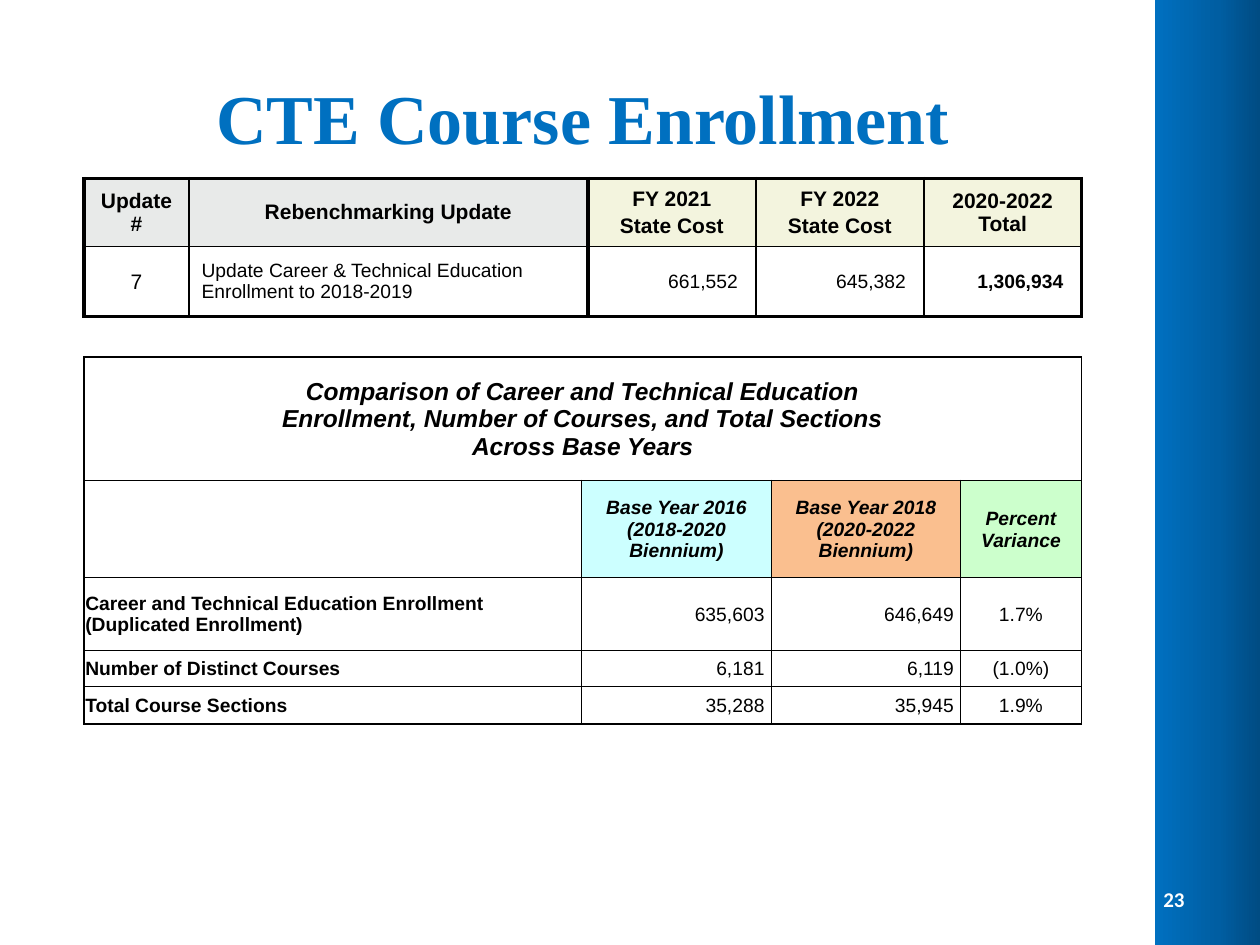
from copy import deepcopy
from dataclasses import dataclass

from lxml.etree import SubElement
from pptx import Presentation
from pptx.dml.color import RGBColor as Rgb
from pptx.enum.shapes import MSO_SHAPE as Preset
from pptx.enum.text import MSO_ANCHOR as Anchor, PP_ALIGN as Align
from pptx.oxml.ns import qn
from pptx.util import Pt


@dataclass(frozen=True)
class Theme:
    """Colours, fonts and type sizes of the slide."""
    title: str = "0070C0"
    bar: tuple = ("0070C0", "005EA2", "004272")
    ink: str = "000000"
    paper: str = "FFFFFF"
    update_head: str = "E8EAE9"
    cost_head: str = "F3F4DE"
    base_2016: str = "CCFFFF"
    base_2018: str = "FABF8F"
    variance: str = "CCFFCC"
    title_font: str = "Times New Roman"
    table_font: str = "Arial"
    number_font: str = "Calibri"
    title_size: float = 40
    caption_size: float = 14
    head_size: float = 12
    body_size: float = 11


THEME = Theme()
NO_STYLE = "{2D5ABB26-0587-4C30-8999-92F81FD0307C}"
TIGHT = (0.75, 0.75, 0.75, 0)
ROOMY = (7.2, 3.6, 7.2, 3.6)
SIDES = (7.2, 0, 7.2, 0)


@dataclass(frozen=True)
class Style:
    """Look of a piece of text."""
    size: float = THEME.body_size
    bold: bool = False
    italic: bool = False
    align: Align = Align.LEFT
    font: str = THEME.table_font
    color: str = THEME.ink


@dataclass(frozen=True)
class Entry:
    """Content and look of one table cell."""
    text: str
    style: Style
    insets: tuple = TIGHT
    fill: str = THEME.paper
    span: int = 1


@dataclass(frozen=True)
class Grid:
    """Place, track sizes and rule weights of a table."""
    left: float
    top: float
    columns: tuple
    rows: tuple
    verticals: tuple
    horizontals: tuple


CAPTION = Style(THEME.caption_size, True, True, Align.CENTER)
BASE_HEAD = Style(bold=True, italic=True, align=Align.CENTER)
COST_HEAD = Style(THEME.head_size, True, align=Align.CENTER)
LABEL = Style(bold=True)
PLAIN = Style()
AMOUNT = Style(align=Align.RIGHT)
TOTAL = Style(bold=True, align=Align.RIGHT)
PERCENT = Style(align=Align.CENTER)
UPDATE_NUMBER = Style(THEME.head_size, align=Align.CENTER)
TITLE = Style(THEME.title_size, True, False, Align.CENTER, THEME.title_font, THEME.title)
PAGE_NUMBER = Style(THEME.head_size, True, False, Align.RIGHT, THEME.number_font, THEME.paper)

COST_GRID = Grid(48, 102, (60, 228, 96, 96, 90), (39, 39.75),
                 (2.25, 1, 2.25, 1, 1, 2.25), (2.25, 1, 2.25))
COST_ROWS = (
    tuple(Entry(text, COST_HEAD, ROOMY, fill) for text, fill in (
        ("Update #", THEME.update_head),
        ("Rebenchmarking Update", THEME.update_head),
        ("FY 2021\nState Cost", THEME.cost_head),
        ("FY 2022\nState Cost", THEME.cost_head),
        ("2020-2022 Total", THEME.cost_head))),
    (Entry("7", UPDATE_NUMBER),
     Entry("Update Career & Technical Education Enrollment to 2018-2019", PLAIN, SIDES),
     Entry("661,552 ", AMOUNT, SIDES),
     Entry("645,382 ", AMOUNT, SIDES),
     Entry("1,306,934 ", TOTAL, SIDES)),
)

COMPARISON_GRID = Grid(48, 204, (284.5, 108.25, 108.25, 69), (70.5, 55.5, 41.5, 20.5, 21.75),
                       (1, 0.5, 0.5, 0.5, 1), (1, 1, 1, 0.5, 0.5, 1))
COMPARISON_DATA = (
    ("Career and Technical Education Enrollment (Duplicated Enrollment)",
     "635,603 ", "646,649 ", "1.7%"),
    ("Number of Distinct Courses", "6,181 ", "6,119 ", "(1.0%)"),
    ("Total Course Sections", "35,288 ", "35,945 ", "1.9%"),
)
COMPARISON_ROWS = (
    (Entry("Comparison of Career and Technical Education\v"
           "Enrollment, Number of Courses, and Total Sections\v"
           "Across Base Years", CAPTION, span=4),),
    (Entry("", PLAIN),
     Entry("Base Year 2016\v(2018-2020 Biennium)", BASE_HEAD, fill=THEME.base_2016),
     Entry("Base Year 2018\v(2020-2022 Biennium)", BASE_HEAD, fill=THEME.base_2018),
     Entry("Percent Variance", BASE_HEAD, fill=THEME.variance)),
    *(tuple(Entry(text, style)
            for text, style in zip(row, (LABEL, AMOUNT, AMOUNT, PERCENT)))
      for row in COMPARISON_DATA),
)


def write(text_frame, text: str, style: Style) -> None:
    """Fill a text frame and format its runs and line breaks."""
    text_frame.text = text
    for index, paragraph in enumerate(text_frame.paragraphs):
        paragraph.alignment = style.align
        if index:
            paragraph.space_before = Pt(0.2 * style.size)
        for run in paragraph.runs:
            font = run.font
            font.name, font.size = style.font, Pt(style.size)
            font.bold, font.italic = style.bold, style.italic
            font.color.rgb = Rgb.from_string(style.color)
        for line_break in paragraph._p.findall(qn("a:br")):
            line_break.append(deepcopy(paragraph.runs[0]._r.rPr))


def add_text(slide, left: float, top: float, width: float, height: float,
             text: str, style: Style) -> None:
    """Add a wrapped, vertically centred text box."""
    text_frame = slide.shapes.add_textbox(Pt(left), Pt(top), Pt(width), Pt(height)).text_frame
    text_frame.word_wrap = True
    text_frame.vertical_anchor = Anchor.MIDDLE
    write(text_frame, text, style)


def add_bar(slide) -> None:
    """Add the gradient bar along the right edge."""
    shape = slide.shapes.add_shape(Preset.RECTANGLE, Pt(660), Pt(0), Pt(72), Pt(540))
    shape.shadow.inherit = False
    shape.line.fill.background()
    shape.fill.gradient()
    shape.fill.gradient_angle = 0
    first_stop = shape._element.xpath(".//a:gs")[0]
    first_stop.addnext(deepcopy(first_stop))
    for index, (stop, color) in enumerate(zip(shape.fill.gradient_stops, THEME.bar)):
        stop.position = index / 2
        stop.color.rgb = Rgb.from_string(color)


def set_borders(cell, weights: dict) -> None:
    """Draw the four cell edges with the given weights, ahead of the fill."""
    properties = cell._tc.get_or_add_tcPr()
    for index, (edge, weight) in enumerate(weights.items()):
        line = SubElement(properties, qn(f"a:{edge}"), w=str(Pt(weight)))
        fill = SubElement(line, qn("a:solidFill"))
        SubElement(fill, qn("a:srgbClr"), val=THEME.ink)
        properties.insert(index, line)


def add_grid(slide, grid: Grid, entries: tuple) -> None:
    """Add a table with ruled lines and formatted cells."""
    table = slide.shapes.add_table(
        len(grid.rows), len(grid.columns), Pt(grid.left), Pt(grid.top),
        Pt(sum(grid.columns)), Pt(sum(grid.rows))).table
    table.first_row = table.horz_banding = False
    table._tbl.tblPr.find(qn("a:tableStyleId")).text = NO_STYLE
    for column, width in zip(table.columns, grid.columns):
        column.width = Pt(width)
    for row, height in zip(table.rows, grid.rows):
        row.height = Pt(height)
    for r, row_entries in enumerate(entries):
        for c, entry in enumerate(row_entries):
            cell = table.cell(r, c)
            if entry.span > 1:
                cell.merge(table.cell(r, c + entry.span - 1))
            cell.vertical_anchor = Anchor.MIDDLE
            (cell.margin_left, cell.margin_top, cell.margin_right,
             cell.margin_bottom) = map(Pt, entry.insets)
            cell.fill.solid()
            cell.fill.fore_color.rgb = Rgb.from_string(entry.fill)
            write(cell.text_frame, entry.text, entry.style)
            set_borders(cell, {
                "lnL": grid.verticals[c], "lnR": grid.verticals[c + entry.span],
                "lnT": grid.horizontals[r], "lnB": grid.horizontals[r + 1]})


def main() -> None:
    """Build and save the presentation."""
    presentation = Presentation()
    presentation.slide_width, presentation.slide_height = Pt(720), Pt(540)
    slide = presentation.slides.add_slide(presentation.slide_layouts[6])
    add_bar(slide)
    add_text(slide, 654, 499, 30, 29, "23", PAGE_NUMBER)
    add_grid(slide, COMPARISON_GRID, COMPARISON_ROWS)
    add_grid(slide, COST_GRID, COST_ROWS)
    add_text(slide, 36, 21.5, 594, 90, "CTE Course Enrollment", TITLE)
    presentation.save("out.pptx")


if __name__ == "__main__":
    main()
